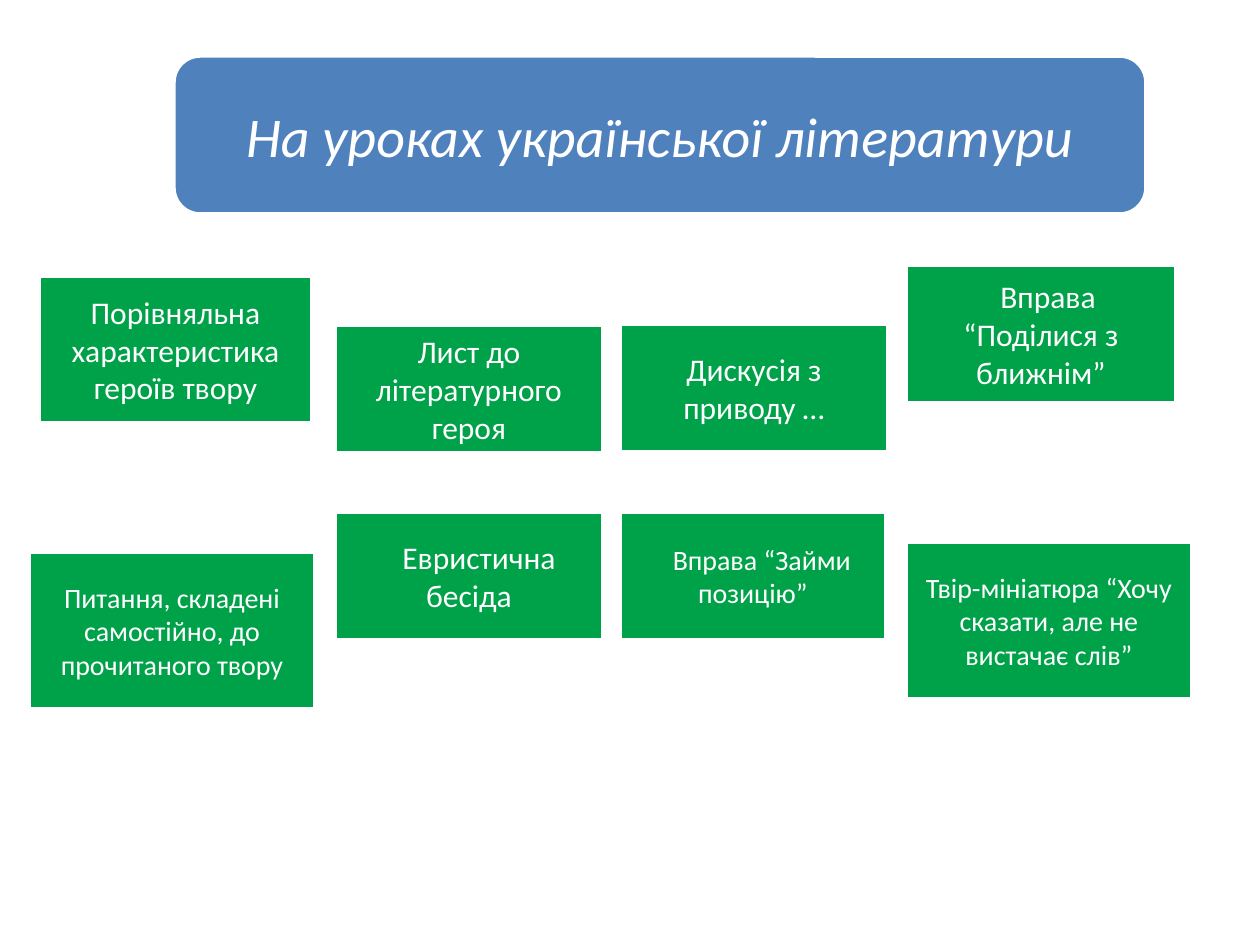
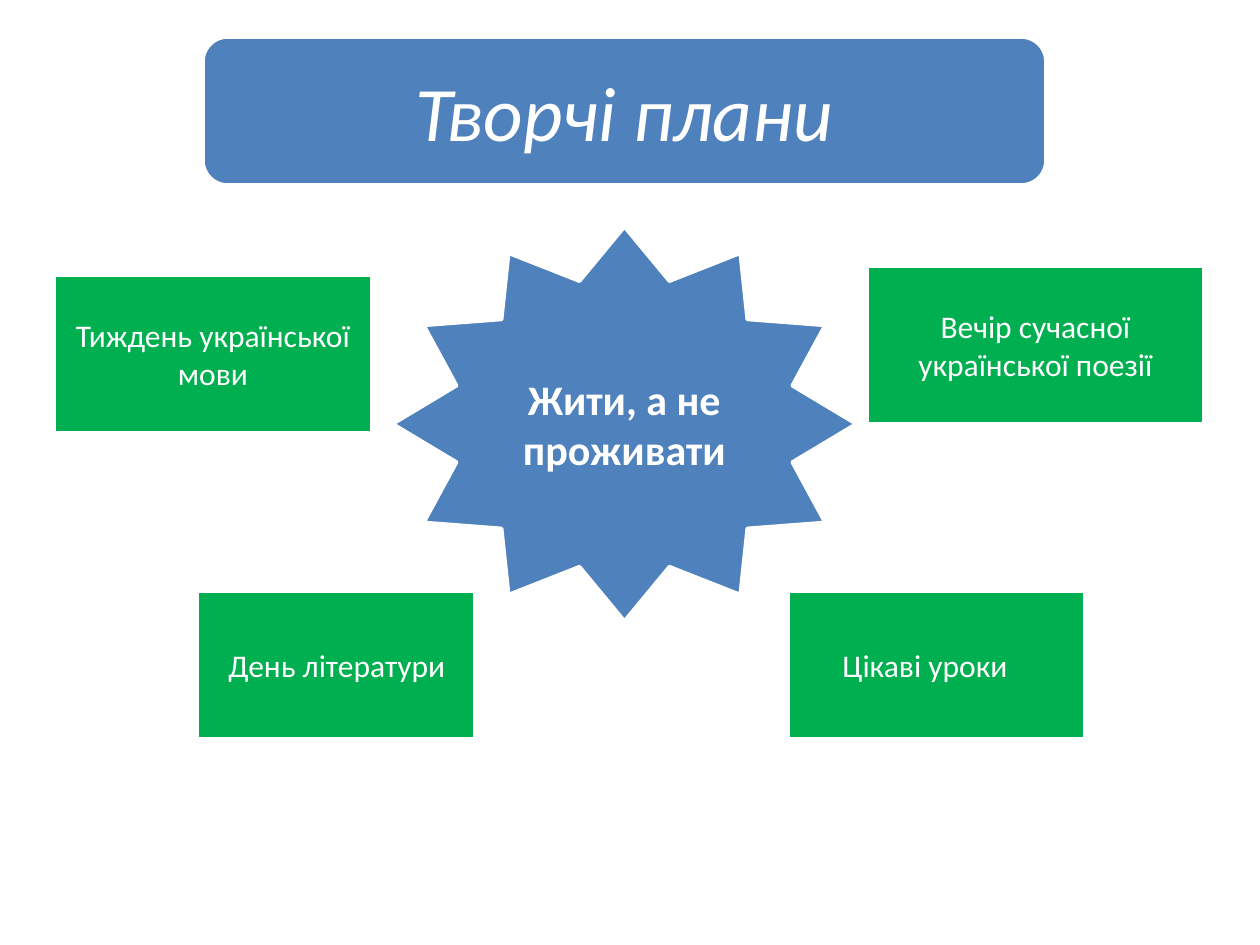
"""Build two slides on literature lessons and creative plans."""
from pptx import Presentation
from pptx.dml.color import RGBColor
from pptx.enum.shapes import MSO_SHAPE
from pptx.enum.text import MSO_ANCHOR, PP_ALIGN
from pptx.util import Pt

PX = 914400 // 126
WHITE = RGBColor(0xFF, 0xFF, 0xFF)
BLUE = RGBColor(0x4F, 0x81, 0xBD)
LESSON_GREEN = RGBColor(0x00, 0xA2, 0x49)
PLAN_GREEN = RGBColor(0x00, 0xB0, 0x50)
RECTANGLE = MSO_SHAPE.RECTANGLE
ROUNDED = MSO_SHAPE.ROUNDED_RECTANGLE
STAR = MSO_SHAPE.STAR_12_POINT
MIDDLE = MSO_ANCHOR.MIDDLE
CENTER, LEFT = PP_ALIGN.CENTER, PP_ALIGN.LEFT

TITLE = {"italic": True}
SLOGAN = {"bold": True}


def add_box(page, kind, place, fill, size, lines, style, align=CENTER, indent=0):
    box = page.shapes.add_shape(kind, *(length * PX for length in place))
    box.shadow.inherit = False
    box.fill.solid()
    box.fill.fore_color.rgb = fill
    box.line.color.rgb = WHITE
    box.line.width = Pt(2)
    frame = box.text_frame
    frame.word_wrap = True
    frame.vertical_anchor = MIDDLE
    for number, line in enumerate(lines):
        para = frame.add_paragraph() if number else frame.paragraphs[0]
        para.alignment = align
        if indent and number == 0:
            para._p.get_or_add_pPr().set("marL", str(indent * PX))
        span = para.add_run()
        span.text = line
        span.font.color.rgb = WHITE
        for name, value in {"name": "Calibri", "size": Pt(size), **style}.items():
            setattr(span.font, name, value)


deck = Presentation()
deck.slide_width = 1260 * PX
deck.slide_height = 945 * PX
blank = deck.slide_layouts[6]

lessons_page = deck.slides.add_slide(blank)
lessons = [
    ((39, 276, 273, 147), 18, ["Порівняльна", "характеристика", "героїв твору"], 0),
    ((335, 325, 268, 128), 18, ["Лист до", "літературного", "героя"], 0),
    ((620, 324, 268, 128), 18, ["Дискусія з", "приводу …"], 0),
    ((906, 265, 270, 138), 18, ["Вправа", "“Поділися з", "ближнім”"], 14),
    ((29, 552, 286, 157), 16, ["Питання, складені", "самостійно, до", "прочитаного твору"], 0),
    ((335, 512, 268, 128), 18, ["Евристична", "бесіда"], 20),
    ((620, 512, 266, 128), 16, ["Вправа “Займи", "позицію”"], 18),
    ((906, 542, 286, 157), 16, ["Твір-мініатюра “Хочу", "сказати, але не", "вистачає слів”"], 0),
]
for place, size, lines, indent in lessons:
    add_box(lessons_page, RECTANGLE, place, LESSON_GREEN, size, lines, {}, indent=indent)
add_box(lessons_page, ROUNDED, (174, 56, 972, 158), BLUE, 32,
        ["На уроках української літератури"], TITLE)

plans_page = deck.slides.add_slide(blank)
add_box(plans_page, ROUNDED, (203, 37, 843, 148), BLUE, 44, ["Творчі плани"], TITLE)
plans = [
    ((54, 275, 318, 158), ["Тиждень української", "мови"], CENTER, 0),
    ((197, 591, 278, 148), ["День літератури"], LEFT, 19),
    ((867, 266, 337, 158), ["Вечір сучасної", "української поезії"], CENTER, 0),
    ((788, 591, 297, 148), ["Цікаві уроки"], LEFT, 42),
]
for place, lines, align, indent in plans:
    add_box(plans_page, RECTANGLE, place, PLAN_GREEN, 18, lines, {}, align, indent)
add_box(plans_page, STAR, (393, 227, 463, 394), BLUE, 24, ["Жити, а не проживати"], SLOGAN)

deck.save("out.pptx")
